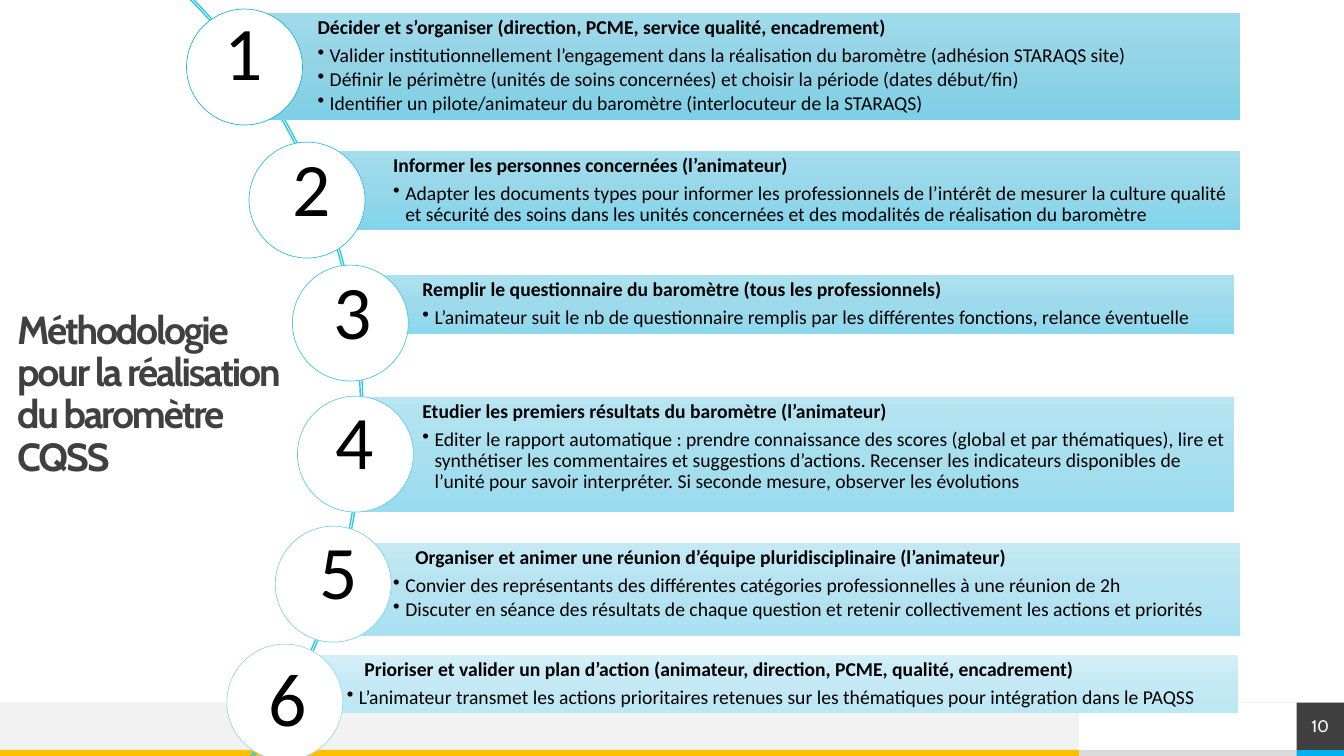
"""Build the slide on the six steps of the CQSS barometer."""
import copy

import pptx
import pptx.util
import pptx.dml.color
import pptx.enum.shapes
import pptx.enum.text
import pptx.oxml.ns
from lxml import etree

COLOURS = {
    "white": "FFFFFF", "black": "000000", "dark": "404040", "pale": "F2F2F2",
    "grey": "DADADA", "gold": "FFC000", "blue": "00B0F0", "arc": "30C7E3",
    "top1": "9FDAEB", "mid1": "92D3E5", "low1": "7DD0E7", "ring1": "22B4CE",
    "top2": "A4DDED", "mid2": "96D7E9", "low2": "82D4EB", "ring2": "31C0DC",
    "top3": "ACE1F0", "mid3": "9EDAEC", "low3": "8CD8ED", "ring3": "4CC5E0",
    "top4": "B7E5F2", "mid4": "A8DFEE", "low4": "99DCEF", "ring4": "66CBE4",
    "top5": "C4E9F4", "mid5": "B6E3F1", "low5": "A9E1F2", "ring5": "80D2E7",
    "top6": "D3EFF7", "mid6": "C5E9F4", "low6": "BCE7F4", "ring6": "9AD9EC",
}
RGB = {name: pptx.dml.color.RGBColor.from_string(code) for name, code in COLOURS.items()}
KIND = pptx.enum.shapes.MSO_SHAPE
ALIGN = pptx.enum.text.PP_ALIGN
ANCHOR = pptx.enum.text.MSO_ANCHOR
Pt = pptx.util.Pt
qn = pptx.oxml.ns.qn

deck = pptx.Presentation()
deck.slide_width = pptx.util.Inches(13.33)
deck.slide_height = pptx.util.Inches(7.5)
page = deck.slides.add_slide(deck.slide_layouts[6])
CELL = deck.slide_height / 75
COLUMNS = deck.slide_width / CELL


def add_shape(kind, cells, fill=None, line=None, weight=0.5):
    shape = page.shapes.add_shape(kind, *[round(cell * CELL) for cell in cells])
    shape.shadow.inherit = False
    for part, colour in ((shape.fill, fill), (shape.line.fill, line)):
        if colour:
            part.solid()
            part.fore_color.rgb = RGB[colour]
        else:
            part.background()
    if line:
        shape.line.width = Pt(weight)
    return shape


def write(para, text, colour, para_format, font_format):
    for name, value in para_format.items():
        setattr(para, name, value)
    span = para.add_run()
    span.text = text
    span.font.color.rgb = RGB[colour]
    for name, value in font_format.items():
        setattr(span.font, name, value)
    return span


for cells, colour in (
    ((107, 74.4, 21.7, 0.6), "grey"),
    ((0, 69.7, 107, 4.7), "pale"),
    ((0, 74.4, 107, 0.6), "gold"),
    ((128.6, 74.4, 4.7, 0.6), "blue"),
):
    add_shape(KIND.RECTANGLE, cells, colour)

rule_top = round(69.7 * CELL)
rule = page.shapes.add_connector(
    pptx.enum.shapes.MSO_CONNECTOR.STRAIGHT, deck.slide_width, rule_top, 0, rule_top)
rule.line.color.rgb = RGB["pale"]
rule.line.width = Pt(0.5)
etree.SubElement(rule._element.spPr, qn("a:effectLst"))

number_box = add_shape(KIND.RECTANGLE, (COLUMNS - 4.7, 69.7, 4.7, 4.7), "dark")
number_frame = {"margin_left": 0, "margin_right": 0, "margin_top": 0, "margin_bottom": 0,
                "vertical_anchor": ANCHOR.MIDDLE, "word_wrap": True}
for name, value in number_frame.items():
    setattr(number_box.text_frame, name, value)
write(number_box.text_frame.paragraphs[0], "10", "white",
      {"alignment": ALIGN.CENTER}, {"size": Pt(12), "name": "Cabin"})

arc = add_shape(KIND.BLOCK_ARC, (-81.3, -17.6, 117.3, 117.3), line="arc", weight=1)
for index, value in enumerate((189, 27, 0.2 / 100)):
    arc.adjustments[index] = value

STEPS = [
    ((24.2, 1.3, 98.8, 10.6), (18.5, 0.9), (21.3, 0, 4.7), 0,
     "Décider et s’organiser (direction, PCME, service qualité, encadrement)",
     ["Valider institutionnellement l’engagement dans la réalisation du baromètre (adhésion STARAQS site)",
      "Définir le périmètre (unités de soins concernées) et choisir la période (dates début/fin)",
      "Identifier un pilote/animateur du baromètre (interlocuteur de la STARAQS)"]),
    ((31.7, 15, 91.3, 7.8), (24.7, 14.1), (28, 13.5, 5.5), 0,
     "Informer les personnes concernées (l’animateur)",
     ["Adapter les documents types pour informer les professionnels de l’intérêt de mesurer la culture qualité "
      "et sécurité des soins dans les unités concernées et des modalités de réalisation du baromètre"]),
    ((34.6, 27.3, 87.8, 5.8), (29, 26.3), (32.1, 25.7, 5.7), 0,
     "Remplir le questionnaire du baromètre (tous les professionnels)",
     ["L’animateur suit le nb de questionnaire remplis par les différentes fonctions, relance éventuelle"]),
    ((34.6, 39.4, 87.8, 11.4), (29.5, 39.3), (32.1, 38.6, 6.1), 0,
     "Etudier les premiers résultats du baromètre (l’animateur)",
     ["Editer le rapport automatique : prendre connaissance des scores (global et par thématiques), lire et "
      "synthétiser les commentaires et suggestions d’actions. Recenser les indicateurs disponibles de "
      "l’unité pour savoir interpréter. Si seconde mesure, observer les évolutions"]),
    ((31.7, 53.9, 91.3, 9.2), (27.3, 52.2), (30.7, 51.5, 5.7), 2.2,
     "Organiser et animer une réunion d’équipe pluridisciplinaire (l’animateur)",
     ["Convier des représentants des différentes catégories professionnelles à une réunion de 2h",
      "Discuter en séance des résultats de chaque question et retenir collectivement les actions et priorités"]),
    ((27.1, 65, 95.7, 5.7), (22.5, 63.9), (25.4, 64.1, 6.2), 1.75,
     "Prioriser et valider un plan d’action (animateur, direction, PCME, qualité, encadrement)",
     ["L’animateur transmet les actions prioritaires retenues sur les thématiques pour intégration dans le PAQSS"]),
]
INSET = round(0.4 * CELL)
BAR_FRAME = {"margin_left": round(7.3 * CELL), "margin_right": INSET, "margin_top": INSET,
             "margin_bottom": INSET, "vertical_anchor": ANCHOR.TOP, "word_wrap": True}
HEADING = {"alignment": ALIGN.LEFT, "line_spacing": 0.9, "space_after": Pt(4.9)}
BULLET = {**HEADING, "level": 1, "space_after": Pt(2.1)}
BODY_FONT = {"size": Pt(14), "name": "Calibri"}
hanging = round(1.2 * CELL)

for step, (bar_cells, ring_corner, _, heading_indent, heading, bullets) in enumerate(STEPS, 1):
    bar = add_shape(KIND.RECTANGLE, bar_cells)
    bar.fill.gradient()
    bar.fill.gradient_angle = 270
    stops = bar._element.spPr.find(qn("a:gradFill")).find(qn("a:gsLst"))
    stops.insert(1, copy.deepcopy(stops[0]))
    for stop, tone, position in zip(bar.fill.gradient_stops, ("top", "mid", "low"), (0, 0.5, 1)):
        stop.color.rgb = RGB[f"{tone}{step}"]
        stop.position = position
    for name, value in BAR_FRAME.items():
        setattr(bar.text_frame, name, value)

    para = bar.text_frame.paragraphs[0]
    para._p.get_or_add_pPr().set("marL", str(round(heading_indent * CELL)))
    write(para, heading, "black", HEADING, {**BODY_FONT, "bold": True})
    for bullet in bullets:
        para = bar.text_frame.add_paragraph()
        properties = para._p.get_or_add_pPr()
        properties.set("marL", str(hanging))
        properties.set("indent", str(-hanging))
        etree.SubElement(properties, qn("a:buChar"), char="•")
        write(para, bullet, "black", BULLET, BODY_FONT)

    add_shape(KIND.OVAL, (*ring_corner, 11.5, 11.5), "white", f"ring{step}")

title_box = page.shapes.add_textbox(*[round(cell * CELL) for cell in (1.7, 17.6, 26.7, 52.1)])
for name, value in {**number_frame, "margin_bottom": round(8.9 * CELL)}.items():
    setattr(title_box.text_frame, name, value)
title = write(title_box.text_frame.paragraphs[0], "Méthodologie pour la réalisation du baromètre CQSS", "dark",
              {"line_spacing": 0.9}, {"size": Pt(28), "name": "Cabin", "bold": True})
title._r.get_or_add_rPr().set("spc", "-150")

for step, (_, _, (left, top, width), *_) in enumerate(STEPS, 1):
    digit_box = page.shapes.add_textbox(*[round(cell * CELL) for cell in (left, top, width, 10.1)])
    digit_box.text_frame.word_wrap = False
    digit_box.text_frame.auto_size = pptx.enum.text.MSO_AUTO_SIZE.SHAPE_TO_FIT_TEXT
    write(digit_box.text_frame.paragraphs[0], str(step), "black",
          {"alignment": ALIGN.CENTER}, {"size": Pt(54), "name": "Calibri"})

deck.save("out.pptx")
